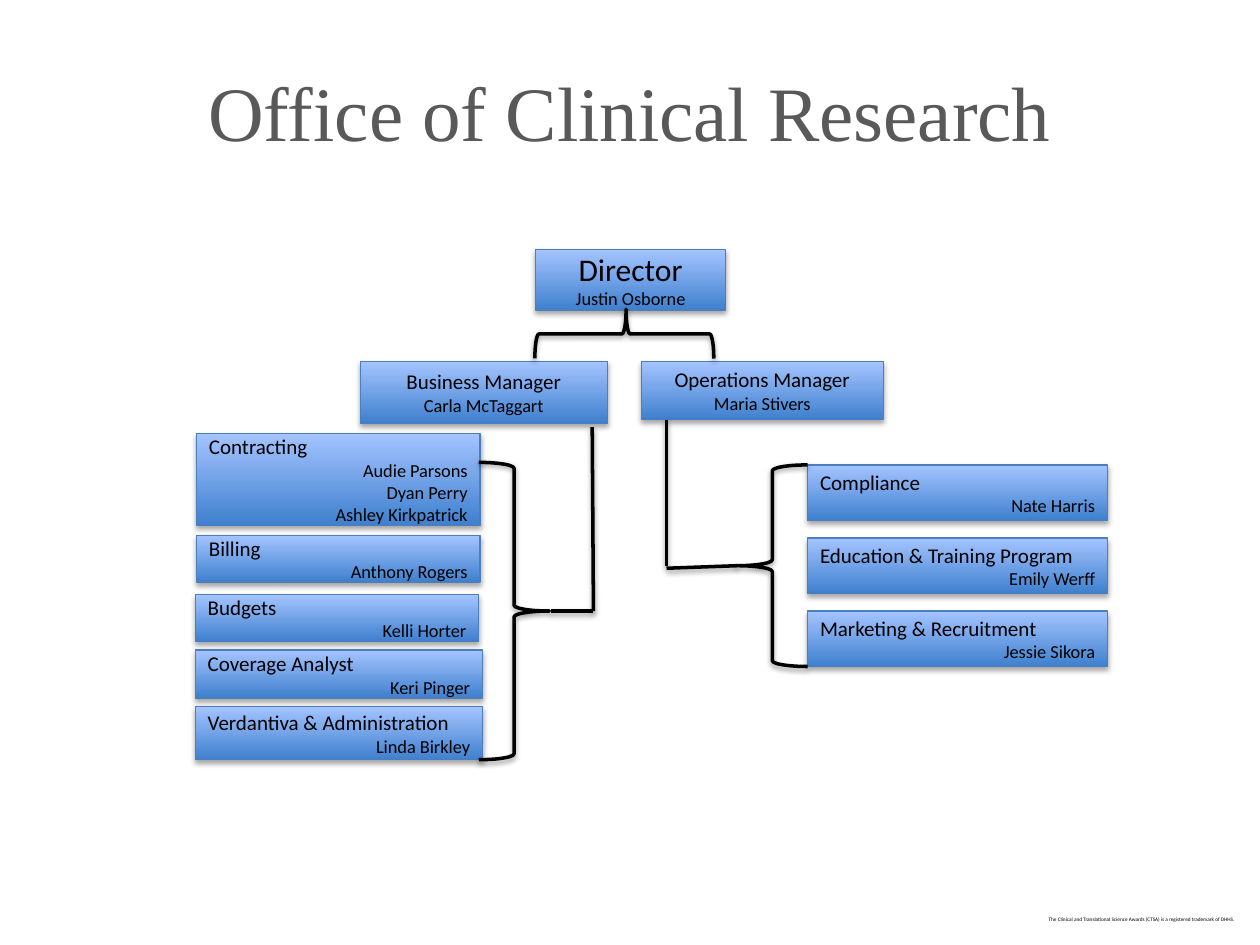
from dataclasses import dataclass

from lxml import etree
from pptx import Presentation
from pptx.dml.color import RGBColor
from pptx.enum.shapes import MSO_CONNECTOR, MSO_SHAPE
from pptx.enum.text import MSO_ANCHOR, PP_ALIGN
from pptx.oxml.ns import qn
from pptx.util import Inches, Pt

CENTER, LEFT, RIGHT = PP_ALIGN.CENTER, PP_ALIGN.LEFT, PP_ALIGN.RIGHT
MIDDLE = MSO_ANCHOR.MIDDLE
RECTANGLE = MSO_SHAPE.RECTANGLE
LEFT_BRACE, RIGHT_BRACE = MSO_SHAPE.LEFT_BRACE, MSO_SHAPE.RIGHT_BRACE
STRAIGHT = MSO_CONNECTOR.STRAIGHT


@dataclass(frozen=True)
class Theme:
    ink: str = "000000"
    title_ink: str = "595959"
    box_bottom: str = "3F80CE"
    box_top: str = "A4C4FF"
    box_border: str = "4B7EBC"
    title_font: str = "Times New Roman"
    body_font: str = "Calibri"
    title_size: float = 44
    director_size: float = 18
    role_size: float = 12
    person_size: float = 10.5
    notice_size: float = 3
    border_width: float = 0.75
    bracket_width: float = 2


THEME = Theme()


@dataclass(frozen=True)
class Frame:
    left: float
    top: float
    width: float
    height: float

    def lengths(self) -> tuple:
        return tuple(Inches(v) for v in (self.left, self.top, self.width, self.height))


@dataclass(frozen=True)
class Position:
    """A role in the office and the people who fill it."""
    role: str
    people: tuple[str, ...]
    frame: Frame
    role_size: float = THEME.role_size
    role_align: PP_ALIGN = LEFT
    people_align: PP_ALIGN = RIGHT


@dataclass(frozen=True)
class Brace:
    kind: MSO_SHAPE
    frame: Frame
    rotation: float = 0
    point: float = 0.5


def manager(role: str, person: str, frame: Frame, size: float = THEME.role_size) -> Position:
    return Position(role, (person,), frame, size, CENTER, CENTER)


MANAGEMENT = [
    manager("Director", "Justin Osborne", Frame(4.25, 1.98, 1.51, 0.48), THEME.director_size),
    manager("Business Manager", "Carla McTaggart", Frame(2.86, 2.87, 1.96, 0.49)),
    manager("Operations Manager", "Maria Stivers", Frame(5.09, 2.87, 1.92, 0.46)),
]
BUSINESS_TEAM = [
    Position("Contracting", ("Audie Parsons", "Dyan Perry", "Ashley Kirkpatrick"),
             Frame(1.56, 3.44, 2.25, 0.73)),
    Position("Billing", ("Anthony Rogers",), Frame(1.56, 4.25, 2.25, 0.37)),
    Position("Budgets", ("Kelli Horter",), Frame(1.55, 4.72, 2.25, 0.37)),
    Position("Coverage Analyst", ("Keri Pinger",), Frame(1.55, 5.16, 2.28, 0.38)),
    Position("Verdantiva & Administration", ("Linda Birkley",), Frame(1.55, 5.61, 2.28, 0.42)),
]
OPERATIONS_TOP, OPERATIONS_STEP = 3.69, 0.58
OPERATIONS_TEAM = [
    Position(role, (person,), Frame(6.41, OPERATIONS_TOP + row * OPERATIONS_STEP, 2.38, 0.44))
    for row, (role, person) in enumerate([
        ("Compliance", "Nate Harris"),
        ("Education & Training Program", "Emily Werff"),
        ("Marketing & Recruitment", "Jessie Sikora"),
    ])
]
BRACES = [
    Brace(RIGHT_BRACE, Frame(3.8, 3.67, 0.56, 2.36)),
    Brace(LEFT_BRACE, Frame(5.85, 3.69, 0.56, 1.6)),
    Brace(RIGHT_BRACE, Frame(4.76, 1.94, 0.39, 1.42), rotation=270, point=0.51),
]
STEMS = [
    (4.7, 3.39, 4.71, 4.85),
    (4.37, 4.85, 4.71, 4.85),
    (5.29, 3.33, 5.29, 4.49),
    (5.29, 4.51, 5.85, 4.49),
]


def rgb(value: str) -> RGBColor:
    return RGBColor.from_string(value)


def add_soft_shadow(shape, opacity: int, distance: float) -> None:
    """Give a shape or connector a blurred shadow straight below it."""
    properties = shape._element.spPr
    effects = properties.find(qn("a:effectLst"))
    if effects is None:
        effects = etree.SubElement(properties, qn("a:effectLst"))
    shadow = etree.SubElement(effects, qn("a:outerShdw"), blurRad=str(Pt(3.1)),
                              dist=str(Pt(distance)), dir="5400000", rotWithShape="0")
    color = etree.SubElement(shadow, qn("a:srgbClr"), val=THEME.ink)
    etree.SubElement(color, qn("a:alpha"), val=str(opacity * 1000))


def style_line(shape, color: str, width: float) -> None:
    shape.line.color.rgb = rgb(color)
    shape.line.width = Pt(width)


def style_paragraph(paragraph, size: float, align: PP_ALIGN,
                    font: str = THEME.body_font, color: str = THEME.ink) -> None:
    paragraph.alignment = align
    for run in paragraph.runs:
        run.font.size = Pt(size)
        run.font.name = font
        run.font.color.rgb = rgb(color)


def draw_position(slide, position: Position) -> None:
    box = slide.shapes.add_shape(RECTANGLE, *position.frame.lengths())
    box.fill.gradient()
    box.fill.gradient_angle = 90
    for stop, color in zip(box.fill.gradient_stops, (THEME.box_bottom, THEME.box_top)):
        stop.color.rgb = rgb(color)
    style_line(box, THEME.box_border, THEME.border_width)
    box.shadow.inherit = False
    add_soft_shadow(box, 35, 1.8)

    box.text_frame.text = "\n".join((position.role, *position.people))
    box.text_frame.vertical_anchor = MIDDLE
    role, *people = box.text_frame.paragraphs
    style_paragraph(role, position.role_size, position.role_align)
    for person in people:
        style_paragraph(person, THEME.person_size, position.people_align)


def draw_brace(slide, brace: Brace) -> None:
    bracket = slide.shapes.add_shape(brace.kind, *brace.frame.lengths())
    bracket.rotation = brace.rotation
    bracket.adjustments[1] = brace.point
    bracket.fill.background()
    style_line(bracket, THEME.ink, THEME.bracket_width)
    bracket.shadow.inherit = False
    add_soft_shadow(bracket, 38, 1.6)


def draw_stem(slide, ends: tuple[float, float, float, float]) -> None:
    stem = slide.shapes.add_connector(STRAIGHT, *(Inches(v) for v in ends))
    style_line(stem, THEME.ink, THEME.bracket_width)
    add_soft_shadow(stem, 38, 1.6)


def draw_text(slide, text: str, frame: Frame, size: float, font: str, color: str):
    text_frame = slide.shapes.add_textbox(*frame.lengths()).text_frame
    text_frame.word_wrap = True
    text_frame.text = text
    style_paragraph(text_frame.paragraphs[0], size, CENTER, font, color)
    return text_frame


def main() -> None:
    prs = Presentation()
    prs.slide_width, prs.slide_height = Inches(10), Inches(7.5)
    slide = prs.slides.add_slide(prs.slide_layouts[6])

    notice = draw_text(
        slide,
        "The Clinical and Translational Science Awards (CTSA) is a registered trademark of DHHS.",
        Frame(8.21, 7.27, 1.7, 0.05), THEME.notice_size, THEME.body_font, THEME.ink)
    notice.margin_left = notice.margin_right = notice.margin_top = notice.margin_bottom = 0
    title = draw_text(slide, "Office of Clinical Research", Frame(0.5, 0.25, 9, 1.25),
                      THEME.title_size, THEME.title_font, THEME.title_ink)
    title.vertical_anchor = MIDDLE

    for position in MANAGEMENT + BUSINESS_TEAM + OPERATIONS_TEAM:
        draw_position(slide, position)
    for brace in BRACES:
        draw_brace(slide, brace)
    for stem in STEMS:
        draw_stem(slide, stem)
    prs.save("out.pptx")


if __name__ == "__main__":
    main()
